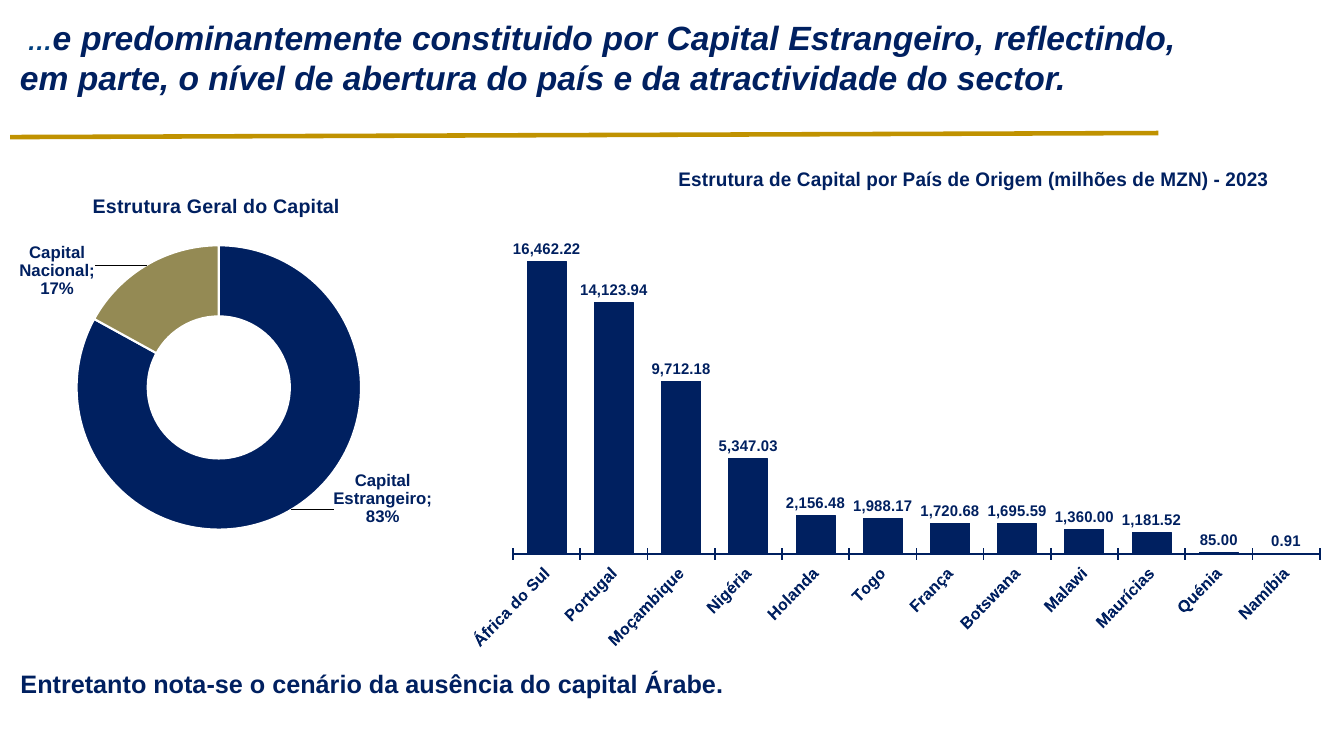
from lxml import etree
from pptx import Presentation
from pptx.chart.data import CategoryChartData
from pptx.dml.color import RGBColor
from pptx.enum.chart import XL_CHART_TYPE, XL_LABEL_POSITION, XL_TICK_LABEL_POSITION, XL_TICK_MARK
from pptx.enum.shapes import MSO_CONNECTOR
from pptx.enum.text import MSO_ANCHOR, PP_ALIGN
from pptx.oxml import parse_xml
from pptx.oxml.ns import nsdecls, qn
from pptx.util import Inches, Pt

COLUMN = XL_CHART_TYPE.COLUMN_CLUSTERED
RING = XL_CHART_TYPE.DOUGHNUT
OUTSIDE = XL_LABEL_POSITION.OUTSIDE_END
LOW = XL_TICK_LABEL_POSITION.LOW
CROSS = XL_TICK_MARK.CROSS
STRAIGHT = MSO_CONNECTOR.STRAIGHT
MIDDLE = MSO_ANCHOR.MIDDLE
CENTER = PP_ALIGN.CENTER
JUSTIFY = PP_ALIGN.JUSTIFY

NAVY, BLUE, GOLD, KHAKI, WHITE = "002060", "003E7E", "C09200", "948A54", "FFFFFF"

ORIGINS = {
    "África do Sul": 16462.22, "Portugal": 14123.94, "Moçambique": 9712.18,
    "Nigéria": 5347.03, "Holanda": 2156.48, "Togo": 1988.17,
    "França": 1720.68, "Botswana": 1695.59, "Malawi": 1360,
    "Maurícias": 1181.52, "Quénia": 85, "Namíbia": 0.91,
}
SHARES = {"Capital Estrangeiro": 0.83, "Capital Nacional": 0.17}


def paint(color, value):
    color.rgb = RGBColor.from_string(value)


def style(font, size, color=NAVY, italic=None):
    font.name, font.size, font.bold, font.italic = "Arial", Pt(size), True, italic
    paint(font.color, color)


def fill(form, color):
    form.fill.solid()
    paint(form.fill.fore_color, color)


def place(node, index, x, y, w=None, h=None):
    for old in node.findall(qn("c:layout")):
        node.remove(old)
    modes = "" if index == 1 and node.tag == qn("c:dLbl") else (
        '<c:xMode val="edge"/><c:yMode val="edge"/>')
    target = '<c:layoutTarget val="inner"/>' if w else ""
    size = f'<c:w val="{w}"/><c:h val="{h}"/>' if w else ""
    node.insert(index, parse_xml(
        f'<c:layout {nsdecls("c")}><c:manualLayout>{target}{modes}'
        f'<c:x val="{x}"/><c:y val="{y}"/>{size}</c:manualLayout></c:layout>'))


def add_chart(slide, box, kind, values, form, title, spot, plot):
    data = CategoryChartData(number_format=form)
    data.categories = list(values)
    data.add_series("Series 1", list(values.values()))
    chart = slide.shapes.add_chart(kind, *map(Inches, box), data).chart
    chart.has_legend = False
    chart.font.name, chart.font.size = "Calibri", Pt(10)
    chart.has_title = True
    head = chart.chart_title
    head.include_in_layout = False
    head.text_frame.text = title
    style(head.text_frame.paragraphs[0].runs[0].font, 14)
    place(head._element, 1, *spot)
    place(chart._chartSpace.find(".//" + qn("c:plotArea")), 0, *plot)
    return chart


def label(series, form, size):
    labels = series.data_labels
    labels.show_value = True
    labels.number_format, labels.number_format_is_linked = form, False
    style(labels.font, size)
    return labels


def add_bars(slide, box):
    form = "#,##0.00"
    chart = add_chart(slide, box, COLUMN, ORIGINS, form,
                      "Estrutura de Capital por País de Origem (milhões de MZN) - 2023",
                      (0.21, 0.05), (0.016, 0.171, 0.967, 0.543))
    plot = chart.plots[0]
    plot.gap_width, plot.overlap, plot.vary_by_categories = 72, -27, False
    series = plot.series[0]
    fill(series.format, NAVY)
    paint(series.format.line.color, NAVY)
    series.format.line.width = Pt(0.75)
    label(series, form, 11).position = OUTSIDE
    scale = chart.value_axis
    scale.visible, scale.has_major_gridlines = False, False
    scale.minimum_scale, scale.maximum_scale = 0, 18000
    axis = chart.category_axis
    axis.major_tick_mark, axis.tick_label_position = CROSS, LOW
    axis.has_major_gridlines = False
    axis.format.line.width = Pt(1.25)
    paint(axis.format.line.color, NAVY)
    style(axis.tick_labels.font, 12)
    axis._element.find(".//" + qn("a:bodyPr")).set("rot", "-2700000")


def add_ring(slide, box):
    chart = add_chart(slide, box, RING, SHARES, "0%", "Estrutura Geral do Capital",
                      (0.22, 0.04), (0.193, 0.185, 0.612, 0.749))
    plot = chart.plots[0]
    plot._element.find(qn("c:holeSize")).set("val", "75")
    series = plot.series[0]
    labels = label(series, "0%", 12)
    labels.show_category_name = True
    lead = labels._element.find(qn("c:showLeaderLines"))
    if lead is None:
        lead = etree.SubElement(labels._element, qn("c:showLeaderLines"))
    lead.set("val", "1")
    offsets = (0.236, 0.052), (-0.231, -0.066)
    for i, (color, offset) in enumerate(zip((NAVY, KHAKI), offsets)):
        point = series.points[i]
        fill(point.format, color)
        paint(point.format.line.color, WHITE)
        point.format.line.width = Pt(1.5)
        style(point.data_label.font, 12)
        note = labels._element.findall(qn("c:dLbl"))[i]
        place(note, 1, *offset)
        note.insert(2, parse_xml(
            f'<c:numFmt {nsdecls("c")} formatCode="0%" sourceLinked="0"/>'))
        note.find(qn("c:showCatName")).set("val", "1")
        etree.SubElement(note, qn("c:separator")).text = "; "


def add_text(slide, box, parts, align):
    frame = slide.shapes.add_textbox(*map(Inches, box)).text_frame
    frame.word_wrap = True
    par = frame.paragraphs[0]
    par.alignment = align
    for text, size, color, italic in parts:
        run = par.add_run()
        run.text = text
        style(run.font, size, color, italic)
    return frame


def add_head(slide, box):
    frame = add_text(slide, box, [
        (" …", 18, BLUE, True),
        ("e predominantemente constituido por Capital Estrangeiro, reflectindo, "
         "em parte, o nível de abertura do país e da atractividade do sector.",
         24, NAVY, True)], JUSTIFY)
    frame.paragraphs[0].line_spacing = Pt(28.8)
    x, y = box[:2]
    rule = slide.shapes.add_connector(
        STRAIGHT, Inches(x), Inches(y + 1.24), Inches(x + 11.39), Inches(y + 1.2))
    paint(rule.line.color, GOLD)
    rule.line.width = Pt(3.25)
    etree.SubElement(rule._element.spPr, qn("a:effectLst"))


def add_foot(slide, box):
    frame = add_text(slide, box, [
        ("Entretanto nota-se o cenário da ausência do capital Árabe.",
         18, NAVY, None)], CENTER)
    frame.vertical_anchor = MIDDLE
    props = frame.paragraphs[0].runs[0].font._element
    props.find(qn("a:solidFill")).addnext(parse_xml(
        f'<a:effectLst {nsdecls("a")}><a:outerShdw blurRad="38100" dist="38100" '
        'dir="2700000" algn="tl"><a:srgbClr val="000000"><a:alpha val="43000"/>'
        '</a:srgbClr></a:outerShdw></a:effectLst>'))


def main():
    deck = Presentation()
    deck.slide_width, deck.slide_height = Inches(13.33), Inches(7.5)
    slide = deck.slides.add_slide(deck.slide_layouts[6])
    add_bars(slide, (4.66, 1.32, 8.57, 5.85))
    add_head(slide, (0.1, 0.12, 11.66, 0.89))
    add_ring(slide, (-0.13, 1.73, 4.61, 3.78))
    add_foot(slide, (0.1, 6.55, 7.18, 0.45))
    deck.save("out.pptx")


if __name__ == "__main__":
    main()
